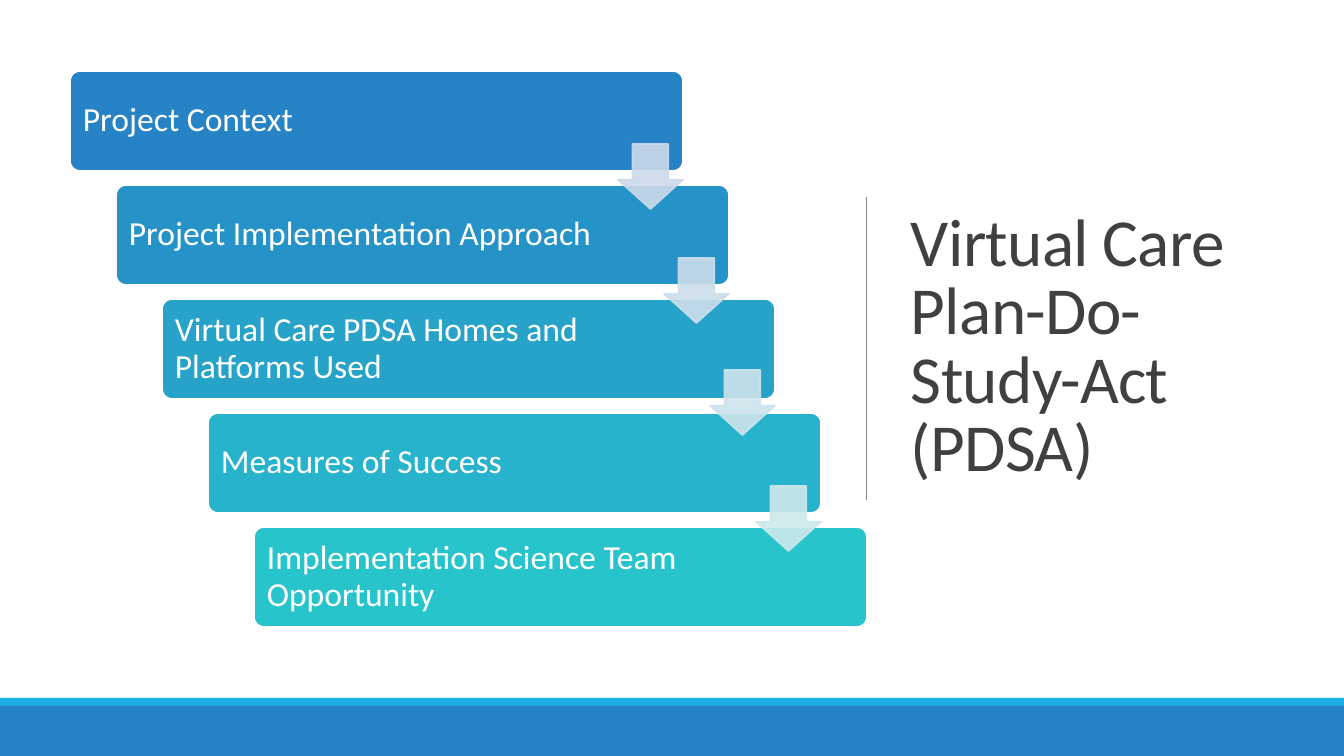
import pptx
import pptx.util
import pptx.dml.color
import pptx.enum.shapes
import pptx.enum.text
import pptx.oxml
import pptx.oxml.ns

SHAPES = pptx.enum.shapes.MSO_SHAPE
WIDTH, HEIGHT = 1344, 756
EMU_PER_PX = 12192000 / WIDTH


class Theme:
    font = "Calibri"
    title_size, step_size = 48, 24
    title_text, white, divider = "404040", "FFFFFF", "808080"
    accent, footer = "1CADE4", "2683C6"
    steps = ["2683C6", "2693C8", "27A3C9", "27B3CB", "28C4CC"]
    arrows = ["CDD9EA", "CDDEEB", "CDE4EC", "CDE9EC"]


def px(value):
    return pptx.util.Emu(round(value * EMU_PER_PX))


def rgb(value):
    return pptx.dml.color.RGBColor.from_string(value)


def add_xml(parent, tag, **attributes):
    child = pptx.oxml.parse_xml(f"<a:{tag} {pptx.oxml.ns.nsdecls('a')}/>")
    for name, value in attributes.items():
        child.set(name, str(value))
    parent.append(child)


class SlideBuilder:
    def __init__(self, theme, page):
        self.theme = theme
        self.page = page

    def shape(self, kind, frame, fill, line=None, adjustments=(), opacity=None):
        box = self.page.shapes.add_shape(kind, *map(px, frame))
        box.shadow.inherit = False
        for index, value in enumerate(adjustments):
            box.adjustments[index] = value
        box.fill.solid()
        box.fill.fore_color.rgb = rgb(fill)
        if line:
            box.line.color.rgb = rgb(line)
            box.line.width = pptx.util.Pt(1.25)
        else:
            box.line.fill.background()
        if opacity:
            for color in box._element.spPr.iter(pptx.oxml.ns.qn("a:srgbClr")):
                add_xml(color, "alpha", val=opacity * 1000)
        return box

    def label(self, box, text, size, color, spacing, margins, tracking=None):
        frame = box.text_frame
        sides = ("margin_left", "margin_top", "margin_right", "margin_bottom")
        formats = {"word_wrap": True,
                   "vertical_anchor": pptx.enum.text.MSO_ANCHOR.MIDDLE,
                   **dict(zip(sides, map(px, margins)))}
        for name, value in formats.items():
            setattr(frame, name, value)
        para = frame.paragraphs[0]
        para.alignment = pptx.enum.text.PP_ALIGN.LEFT
        para.line_spacing = spacing
        span = para.add_run()
        span.text = text
        for name, value in {"name": self.theme.font, "size": pptx.util.Pt(size)}.items():
            setattr(span.font, name, value)
        span.font.color.rgb = rgb(color)
        if tracking:
            span.font._element.set("spc", str(tracking))

    def title(self, frame, text):
        box = self.page.shapes.add_textbox(*map(px, frame))
        self.label(box, text, self.theme.title_size, self.theme.title_text,
                   0.85, (10, 5, 10, 5), tracking=-50)

    def divider(self, x, top, bottom):
        line = self.page.shapes.add_connector(
            pptx.enum.shapes.MSO_CONNECTOR.STRAIGHT, *map(px, (x, top, x, bottom)))
        line.line.color.rgb = rgb(self.theme.divider)
        line.line.width = pptx.util.Pt(0.5)
        add_xml(line._element.spPr, "effectLst")

    def step(self, frame, text, fill):
        box = self.shape(SHAPES.ROUNDED_RECTANGLE, frame, fill, self.theme.white, [0.1])
        self.label(box, text, self.theme.step_size, self.theme.white,
                   0.9, (10, 10, 121, 10))

    def arrow(self, frame, fill):
        self.shape(SHAPES.DOWN_ARROW, frame, fill, fill, [0.55, 0.45], opacity=90)


def main():
    deck = pptx.Presentation()
    deck.slide_width, deck.slide_height = px(WIDTH), px(HEIGHT)
    theme = Theme()
    builder = SlideBuilder(theme, deck.slides.add_slide(deck.slide_layouts[6]))

    # Title and divider
    builder.title((901, 70, 372, 557), "Virtual Care Plan-Do-Study-Act (PDSA)")
    builder.divider(866, 197, 500)

    # Footer bands
    builder.shape(SHAPES.RECTANGLE, (0, 698, WIDTH, 8), theme.accent)
    builder.shape(SHAPES.RECTANGLE, (0, 706, WIDTH, 50), theme.footer)

    # Staircase of steps, then the arrows that overlap them
    shift, drop = 46, 114
    steps = ["Project Context", "Project Implementation Approach",
             "Virtual Care PDSA Homes and Platforms Used",
             "Measures of Success", "Implementation Science Team Opportunity"]
    for index, (text, fill) in enumerate(zip(steps, theme.steps)):
        builder.step((70 + index * shift, 71 + index * drop, 613, 100), text, fill)
    arrow_tops = [144, 258, 370, 486]
    for index, (top, fill) in enumerate(zip(arrow_tops, theme.arrows)):
        builder.arrow((618 + index * shift, top, 65, 65), fill)

    deck.save("out.pptx")


if __name__ == "__main__":
    main()
